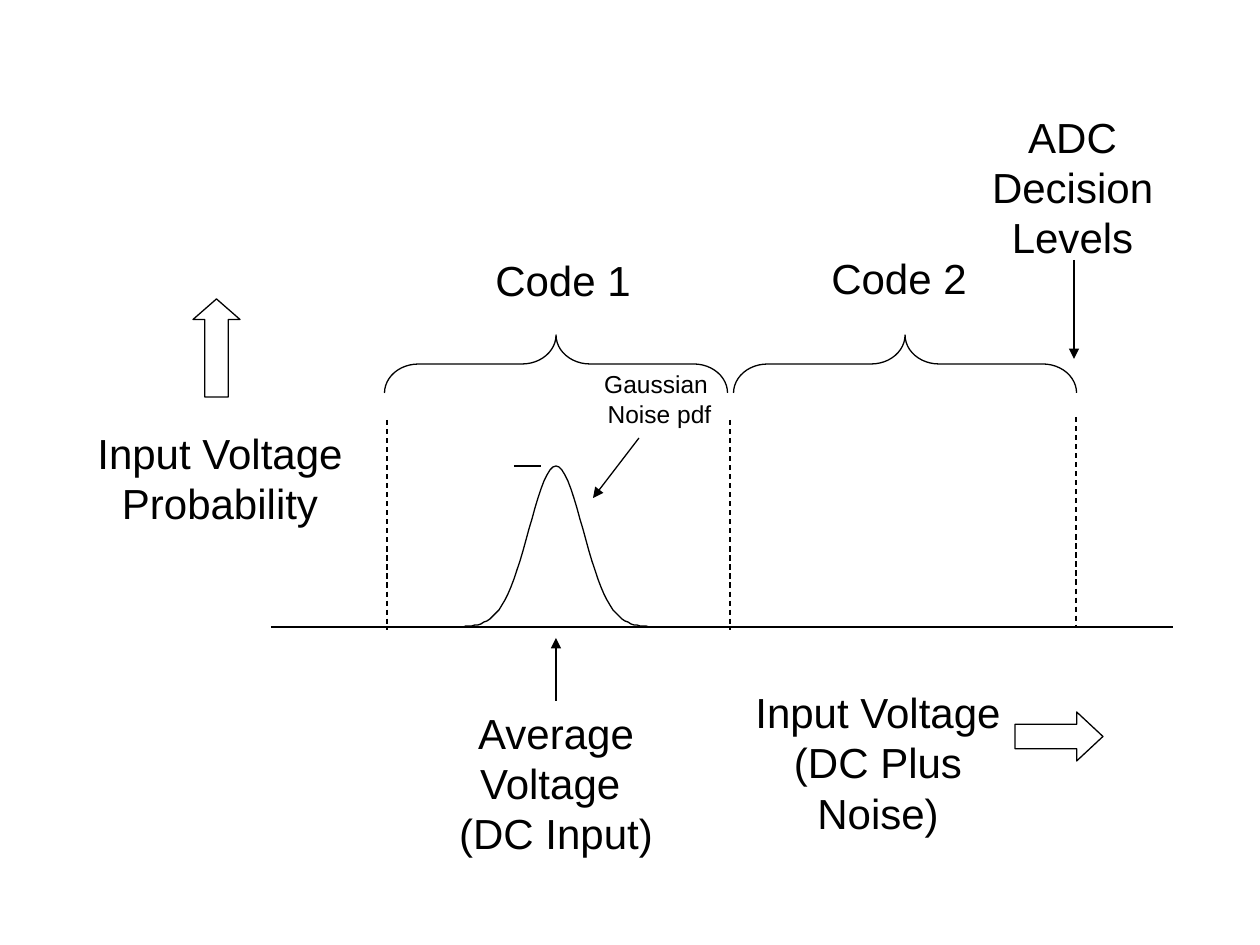
from dataclasses import dataclass
from math import exp

from pptx import Presentation
from pptx.dml.color import RGBColor as Rgb
from pptx.enum.dml import MSO_LINE_DASH_STYLE as Dash
from pptx.enum.shapes import MSO_CONNECTOR as Link, MSO_SHAPE as Kind
from pptx.enum.text import PP_ALIGN as Align
from pptx.oxml.ns import qn
from pptx.util import Pt
from lxml.etree import SubElement as Sub

SCALE = 914400 / 126


def px(n):
    return round(n * SCALE)


@dataclass(frozen=True)
class Theme:
    ink: Rgb = Rgb(0, 0, 0)
    paper: Rgb = Rgb(255, 255, 255)
    font: str = "Arial"
    big: int = 24
    small: int = 14
    rule: float = 0.75


class Pen:
    def __init__(self, slide, theme):
        self.slide = slide
        self.shapes = slide.shapes
        self.theme = theme

    def ink(self, item):
        item.line.color.rgb = self.theme.ink
        item.line.width = Pt(self.theme.rule)

    def text(self, box, *lines, size=None):
        item = self.shapes.add_textbox(*map(px, box))
        frame = item.text_frame
        frame.word_wrap = True
        frame.text = "\n".join(lines)
        for par in frame.paragraphs:
            par.alignment = Align.CENTER
            par.font.name = self.theme.font
            par.font.size = Pt(size or self.theme.big)
            par.font.color.rgb = self.theme.ink
        return item

    def line(self, start, end, dash=False, arrow=False):
        item = self.shapes.add_connector(Link.STRAIGHT, *map(px, start + end))
        self.ink(item)
        if dash:
            item.line.dash_style = Dash.DASH
        if arrow:
            Sub(item.line._get_or_add_ln(), qn("a:tailEnd"), type="triangle")
        Sub(item._element.spPr, qn("a:effectLst"))
        return item

    def shape(self, kind, box, adj, fill=True, turn=0):
        item = self.shapes.add_shape(kind, *map(px, box))
        for i, value in enumerate(adj):
            item.adjustments[i] = value
        item.rotation = turn
        item.shadow.inherit = False
        if fill:
            item.fill.solid()
            item.fill.fore_color.rgb = self.theme.paper
        else:
            item.fill.background()
        self.ink(item)

    def brace(self, mid, top, wide, high):
        box = (mid - high / 2, top + high / 2 - wide / 2, high, wide)
        self.shape(Kind.LEFT_BRACE, box, (0.585, 0.5), fill=False, turn=90)

    def curve(self, points):
        first, *rest = points
        form = self.shapes.build_freeform(*first, scale=SCALE)
        form.add_line_segments(rest, close=False)
        item = form.convert_to_shape()
        item.fill.background()
        item.shadow.inherit = False
        self.ink(item)


def main():
    deck = Presentation()
    deck.slide_width, deck.slide_height = px(1260), px(945)
    theme = Theme()
    pen = Pen(deck.slides.add_slide(deck.slide_layouts[6]), theme)

    mid, peak, base, sigma, reach = 556, 466, 627, 27, 111

    pen.text((742, 680, 272, 121), "Input Voltage (DC Plus Noise)")
    pen.shape(Kind.RIGHT_ARROW, (1015, 712, 88, 49), (0.5, 0.536))
    pen.line((271, base), (1173, base))

    for side in (-1, 1):
        pen.curve([
            (mid + side * d, base - (base - peak) * exp(-(d / sigma) ** 2 / 2))
            for d in range(0, reach + 1, 3)
        ])

    for x, top, end in ((730, 420, 630), (387, 420, 630), (1076, 417, base)):
        pen.line((x, top), (x, end), dash=True)

    pen.text((970, 105, 205, 163), "ADC Decision Levels")
    pen.text((457, 248, 212, 89), "Code 1")
    pen.text((793, 246, 212, 74), "Code 2")
    pen.line((1074, 260), (1074, 359), arrow=True)
    for x in (mid, 905):
        pen.brace(x, 335, 343, 58)

    pen.text((84, 421, 272, 152), "Input Voltage Probability")
    pen.shape(Kind.UP_ARROW, (193, 299, 47, 98), (0.5, 0.438))

    mean = pen.text((408, 701, 296, 139), "Average Voltage ", "(DC Input)")
    rise = pen.line((mid, 701), (mid, 638), arrow=True)
    rise.begin_connect(mean, 0)

    pen.line((514, peak), (541, peak))
    pen.text((580, 363, 159, 88), "Gaussian ", "Noise pdf", size=theme.small)
    pen.line((639, 438), (593, 498), arrow=True)

    deck.save("out.pptx")


if __name__ == "__main__":
    main()
